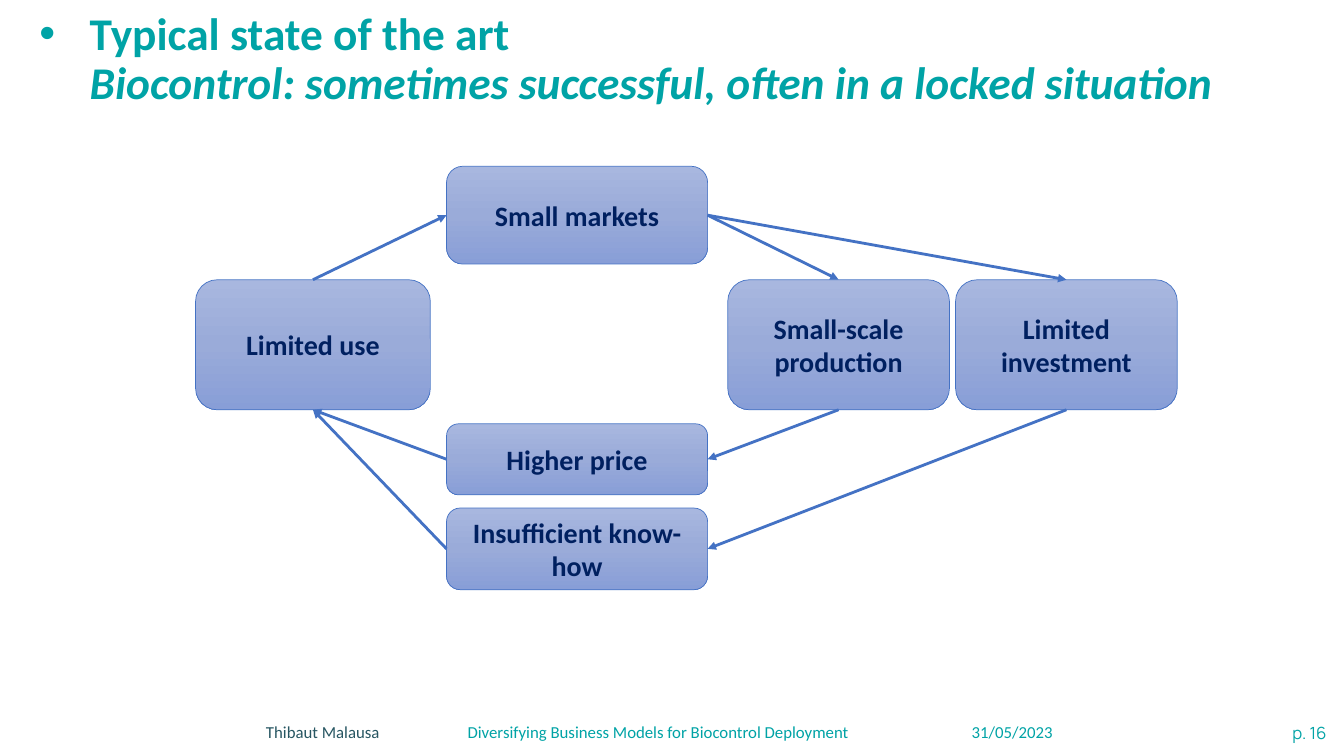
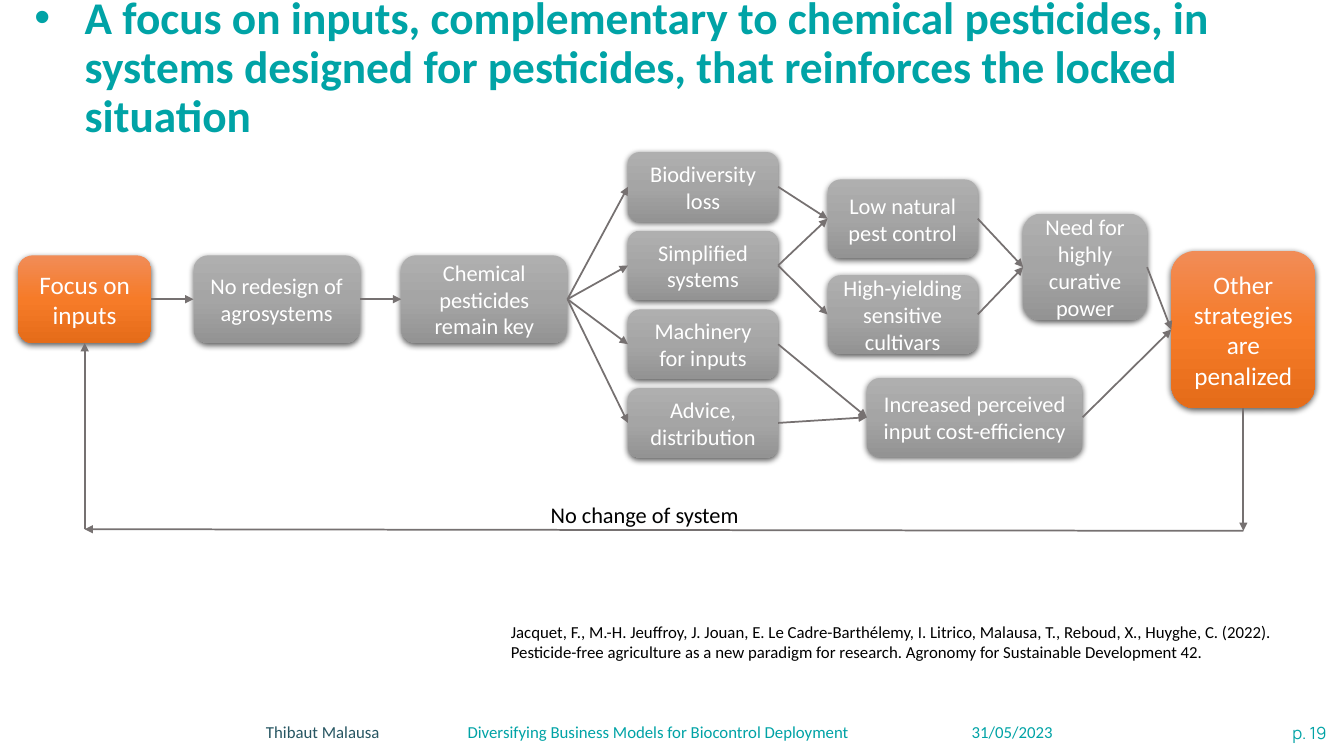
from enum import IntEnum

from lxml import etree
from pptx import Presentation
from pptx import util as u
from pptx.dml.color import RGBColor
from pptx.enum import shapes, text
from pptx.oxml.ns import qn

CELL = u.Inches(1) / 12  # the slide is a grid of 160 columns by 90 rows
COLUMNS, ROWS = 160, 90
FONT = "Calibri"
COLORS = {"teal": "00A3A6", "slate": "275662", "navy": "002060", "blue": "4472C4",
          "gray": "767171", "white": "FFFFFF", "black": "000000"}
GRADIENTS = {"blue": ("A8B7DF", "9AABD9", "889ED7"),
             "gray": ("AFAFAF", "A5A5A5", "939393"),
             "orange": ("F18C57", "F67B28", "E56C19")}


class Side(IntEnum):
    """Connection sites of a rounded rectangle."""
    TOP = 0
    LEFT = 1
    BOTTOM = 2
    RIGHT = 3


def cells(*lengths):
    return [round(length * CELL) for length in lengths]


def add_xml(parent, tag, **attributes):
    return etree.SubElement(parent, qn(tag), {k: str(v) for k, v in attributes.items()})


class Deck:
    def __init__(self):
        self.prs = Presentation()
        self.prs.slide_width, self.prs.slide_height = cells(COLUMNS, ROWS)
        self.slide = None

    def add_slide(self, page):
        self.slide = self.prs.slides.add_slide(self.prs.slide_layouts[5])
        self.label(f"p. {page}", (131.76, 85.44, 27.36, 3.6), 12, "teal",
                   text.PP_ALIGN.RIGHT, "Manrope")
        self.footer()

    def styled_run(self, paragraph, words, size, color, font=FONT, bold=False, italic=False):
        run = paragraph.add_run()
        run.text = words
        run.font.name, run.font.size = font, u.Pt(size)
        run.font.bold, run.font.italic = bold, italic
        run.font.color.rgb = RGBColor.from_string(COLORS[color])

    def text_box(self, box):
        frame = self.slide.shapes.add_textbox(*cells(*box)).text_frame
        frame.word_wrap = True
        return frame.paragraphs[0]

    def label(self, words, box, size, color="black", align=text.PP_ALIGN.LEFT, font=FONT):
        paragraph = self.text_box(box)
        paragraph.alignment = align
        self.styled_run(paragraph, words, size, color, font)

    def footer(self):
        paragraph = self.text_box((30.48, 85.32, 106.68, 3.6))
        tabs = add_xml(paragraph._p.get_or_add_pPr(), "a:tabLst")
        for stop in (2, 7):
            add_xml(tabs, "a:tab", pos=u.Inches(stop), algn="l")
        self.styled_run(paragraph, "Thibaut Malausa\t", 12, "slate")
        self.styled_run(paragraph,
                        "Diversifying Business Models for Biocontrol Deployment\t31/05/2023",
                        12, "teal")

    def title(self, heading, box, subtitle=None):
        title = self.slide.shapes.title
        title.left, title.top, title.width, title.height = cells(*box)
        frame = title.text_frame
        frame.auto_size = text.MSO_AUTO_SIZE.NONE
        frame.word_wrap = True
        frame.vertical_anchor = text.MSO_ANCHOR.MIDDLE
        frame.margin_left = 0
        paragraph = frame.paragraphs[0]
        properties = paragraph._p.get_or_add_pPr()
        properties.set("marL", str(u.Inches(0.5)))
        properties.set("indent", str(-u.Inches(0.5)))
        add_xml(properties, "a:buFont", typeface="Arial")
        add_xml(properties, "a:buChar", char="•")
        paragraph.alignment = text.PP_ALIGN.LEFT
        paragraph.line_spacing = 0.9
        self.styled_run(paragraph, heading, 32.4, "teal", bold=True)
        if subtitle:
            paragraph.add_line_break()
            self.styled_run(paragraph, subtitle, 32.4, "teal", bold=True, italic=True)

    def node(self, words, box, gradient="gray", size=16):
        """Rounded box: outlined with navy text if blue, otherwise shadowed with white text."""
        outlined = gradient == "blue"
        node = self.slide.shapes.add_shape(shapes.MSO_SHAPE.ROUNDED_RECTANGLE, *cells(*box))
        node.fill.gradient()
        node.fill.gradient_angle = 270
        stops = node._element.spPr.find(".//" + qn("a:gsLst"))
        stops.clear()
        for position, shade in zip((0, 50000, 100000), GRADIENTS[gradient]):
            add_xml(add_xml(stops, "a:gs", pos=position), "a:srgbClr", val=shade)
        node.shadow.inherit = False
        if outlined:
            node.line.color.rgb = RGBColor.from_string(COLORS["blue"])
            node.line.width = u.Pt(0.5)
        else:
            node.line.fill.background()
            shadow = add_xml(node._element.spPr.find(qn("a:effectLst")), "a:outerShdw",
                             blurRad=u.Pt(4.5), dist=u.Pt(1.5), dir=5400000,
                             algn="ctr", rotWithShape=0)
            add_xml(add_xml(shadow, "a:srgbClr", val=COLORS["black"]), "a:alpha", val=63000)
        frame = node.text_frame
        frame.word_wrap = True
        frame.vertical_anchor = text.MSO_ANCHOR.MIDDLE
        paragraph = frame.paragraphs[0]
        paragraph.alignment = text.PP_ALIGN.CENTER
        self.styled_run(paragraph, words, size, "navy" if outlined else "white", bold=outlined)
        return node

    def arrow(self, start, end, color="gray", width=1.25):
        """Arrow whose ends are each a (node, Side) pair or a (column, row) point."""
        points = [(0, 0) if isinstance(tip[1], Side) else cells(*tip) for tip in (start, end)]
        arrow = self.slide.shapes.add_connector(shapes.MSO_CONNECTOR.STRAIGHT,
                                                *points[0], *points[1])
        for tip, connect in ((start, arrow.begin_connect), (end, arrow.end_connect)):
            if isinstance(tip[1], Side):
                connect(*tip)
        arrow.line.color.rgb = RGBColor.from_string(COLORS[color])
        arrow.line.width = u.Pt(width)
        properties = arrow._element.spPr
        add_xml(properties.find(qn("a:ln")), "a:tailEnd", type="triangle")
        add_xml(properties, "a:effectLst")

    def flow(self, *pairs):
        """Arrows from the right of one node to the left of the next."""
        for source, target in pairs:
            self.arrow((source, Side.RIGHT), (target, Side.LEFT))


def locked_situation(deck):
    deck.add_slide(16)
    deck.title("Typical state of the art", (4.68, 2.76, 150.48, 8.76),
               "Biocontrol: sometimes successful, often in a locked situation")

    def blue(words, *box):
        return deck.node(words, box, "blue", 20)

    middle, middle_width = 53.16, 31.08
    side_top, side_height = 33.3, 15.48
    markets = blue("Small markets", middle, 19.8, middle_width, 11.64)
    investment = blue("Limited investment", 113.76, side_top, 26.4, side_height)
    know_how = blue("Insufficient know-how", middle, 60.48, middle_width, 9.72)
    use = blue("Limited use", 23.28, side_top, 27.96, side_height)
    production = blue("Small-scale production", 86.64, side_top, 26.4, side_height)
    price = blue("Higher price", middle, 50.45, middle_width, 8.45)

    links = [((use, Side.TOP), (markets, Side.LEFT))]
    for cause, effect in ((production, price), (investment, know_how)):
        links += [((markets, Side.RIGHT), (cause, Side.TOP)),
                  ((cause, Side.BOTTOM), (effect, Side.RIGHT)),
                  ((effect, Side.LEFT), (use, Side.BOTTOM))]
    for start, end in links:
        deck.arrow(start, end, "blue", 2)


def focus_on_inputs(deck):
    deck.add_slide(19)
    deck.title("A focus on inputs, complementary to chemical pesticides, in systems designed "
               "for pesticides, that reinforces the locked situation",
               (4.08, 1.2, 150.48, 14.04))
    deck.label("Jacquet, F., M.-H. Jeuffroy, J. Jouan, E. Le Cadre-Barthélemy, I. Litrico, "
               "Malausa, T., Reboud, X., Huyghe, C. (2022). Pesticide-free agriculture as a new "
               "paradigm for research. Agronomy for Sustainable Development 42.",
               (59.64, 73.44, 93.24, 6), 12)

    focus = deck.node("Focus on inputs", (2.16, 30.4, 15.84, 10.44), "orange", 18)
    redesign = deck.node("No redesign of agrosystems", (23.04, 30.4, 19.8, 10.44))
    pesticides = deck.node("Chemical pesticides remain key", (47.76, 30.4, 19.8, 10.44))
    effects = [deck.node(words, (74.76, 18.1 + 9.37 * row, 17.88, 8.28))
               for row, words in enumerate(("Biodiversity loss", "Simplified systems",
                                            "Machinery for inputs", "Advice, distribution"))]
    biodiversity, systems, machinery, advice = effects
    control = deck.node("Low natural pest control", (98.52, 21.36, 17.88, 9.36))
    cultivars = deck.node("High-yielding sensitive cultivars", (98.52, 32.76, 17.88, 9.36))
    efficiency = deck.node("Increased perceived input cost-efficiency",
                           (103.2, 45, 25.68, 9.36))
    power = deck.node("Need for highly curative power", (121.8, 25.44, 14.76, 12.72))
    penalized = deck.node("Other strategies are penalized",
                          (139.44, 29.88, 17.16, 18.72), "orange", 18)

    deck.flow((focus, redesign), (redesign, pesticides),
              *((pesticides, effect) for effect in effects),
              (biodiversity, control), (systems, control), (systems, cultivars),
              (machinery, efficiency), (advice, efficiency),
              (control, power), (cultivars, power),
              (power, penalized), (efficiency, penalized))

    loop_start, loop_end = (148.02, 63.2), (10.08, 63)
    deck.arrow((penalized, Side.BOTTOM), loop_start)
    deck.arrow(loop_start, loop_end)
    deck.arrow(loop_end, (focus, Side.BOTTOM))
    deck.label("No change of system", (62.04, 59.04, 29.4, 4.2), 16,
               align=text.PP_ALIGN.CENTER)


def main():
    deck = Deck()
    locked_situation(deck)
    focus_on_inputs(deck)
    deck.prs.save("out.pptx")


if __name__ == "__main__":
    main()
